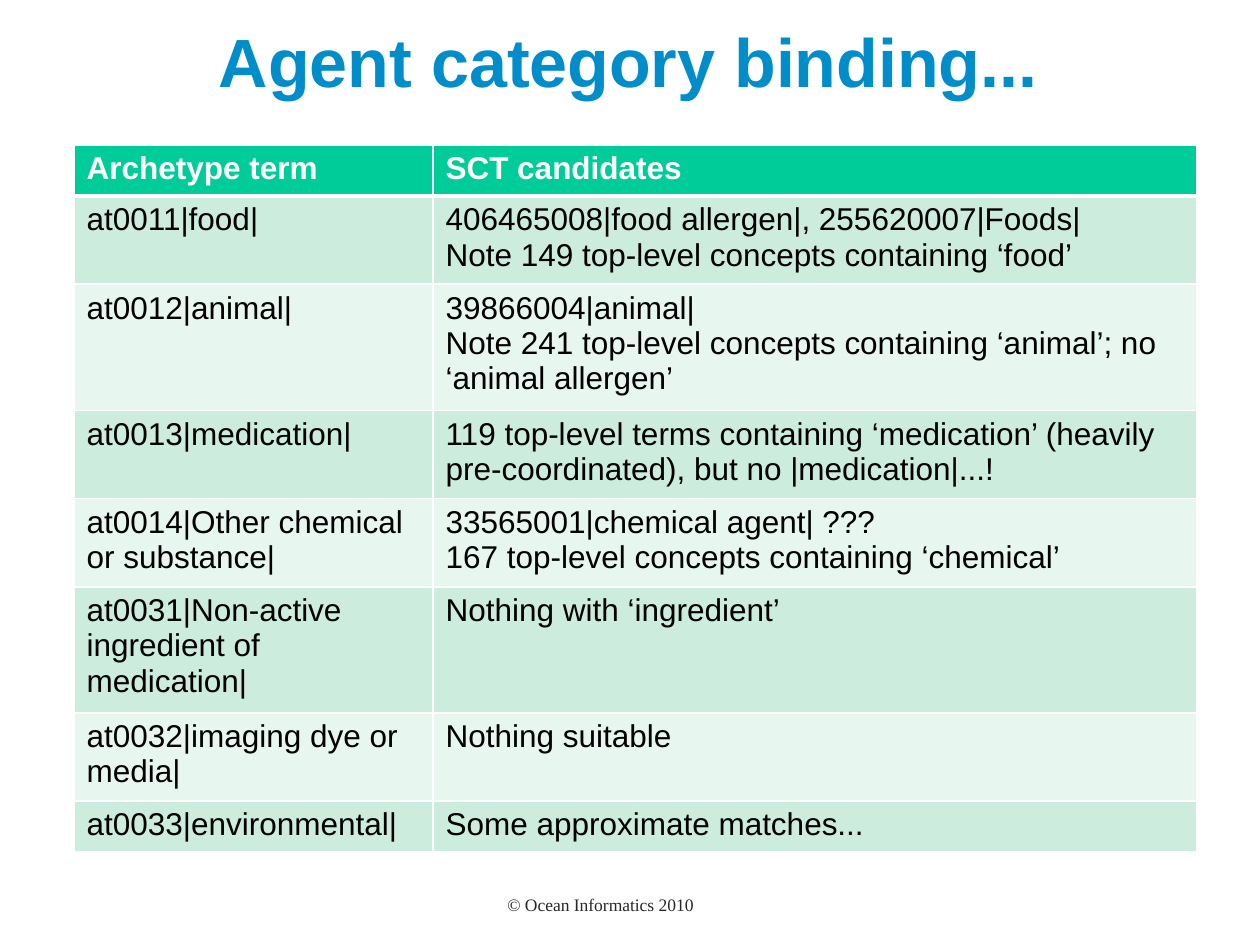
"""Build the agent category binding slide with its table of terminology candidates."""
import dataclasses

import lxml.etree
import pptx
import pptx.dml.color
import pptx.enum.text
import pptx.oxml.ns
import pptx.util

EMU_PER_PX = 914400 / 126


def px(length):
    return pptx.util.Emu(round(length * EMU_PER_PX))


@dataclasses.dataclass(frozen=True)
class Theme:
    heading_font: str = "Arial"
    footer_font: str = "Times New Roman"
    title_size: int = 39
    table_size: int = 18
    footer_size: int = 10
    title: str = "008DC9"
    footer: str = "292627"
    header_fill: str = "00CC99"
    header_text: str = "FFFFFF"
    body_text: str = "000000"
    bands: tuple = ("CCECDE", "E7F6EF")
    border: str = "FFFFFF"


class SlideBuilder:
    def __init__(self, slide, theme):
        self.slide = slide
        self.theme = theme

    def format_text(self, text_frame, font, size, color, bold=False):
        for paragraph in text_frame.paragraphs:
            for run in paragraph.runs:
                run.font.name = font
                run.font.size = pptx.util.Pt(size)
                run.font.bold = bold
                run.font.color.rgb = pptx.dml.color.RGBColor.from_string(color)

    def add_text(self, text, left, top, width, height, font, size, color, bold=False):
        shape = self.slide.shapes.add_textbox(px(left), px(top), px(width), px(height))
        text_frame = shape.text_frame
        text_frame.word_wrap = True
        text_frame.vertical_anchor = pptx.enum.text.MSO_ANCHOR.MIDDLE
        text_frame.text = text
        text_frame.paragraphs[0].alignment = pptx.enum.text.PP_ALIGN.CENTER
        self.format_text(text_frame, font, size, color, bold)

    def add_border(self, cell, side, width):
        properties = cell._tc.get_or_add_tcPr()
        name = pptx.oxml.ns.qn
        line = lxml.etree.SubElement(properties, name(f"a:ln{side}"), w=str(pptx.util.Pt(width)))
        fill = lxml.etree.SubElement(line, name("a:solidFill"))
        lxml.etree.SubElement(fill, name("a:srgbClr"), val=self.theme.border)

    def add_cell(self, cell, text, row_index):
        theme = self.theme
        is_header = row_index == 0
        cell.text_frame.text = text
        color = theme.header_text if is_header else theme.body_text
        self.format_text(cell.text_frame, theme.heading_font, theme.table_size, color, is_header)
        widths = {"L": 1, "R": 1, "T": 3 if row_index == 1 else 1, "B": 3 if is_header else 1}
        for side, width in widths.items():
            self.add_border(cell, side, width)
        fill = theme.header_fill if is_header else theme.bands[(row_index - 1) % 2]
        cell.fill.solid()
        cell.fill.fore_color.rgb = pptx.dml.color.RGBColor.from_string(fill)

    def add_table(self, rows, left, top, column_widths, row_height):
        shape = self.slide.shapes.add_table(
            len(rows), len(column_widths), px(left), px(top),
            px(sum(column_widths)), px(row_height * len(rows)))
        table = shape.table
        for column, width in zip(table.columns, column_widths):
            column.width = px(width)
        for row_index, texts in enumerate(rows):
            table.rows[row_index].height = px(row_height)
            for column_index, text in enumerate(texts):
                self.add_cell(table.cell(row_index, column_index), text, row_index)


BINDINGS = [
    ("Archetype term", "SCT candidates"),
    ("at0011|food|",
     "406465008|food allergen|, 255620007|Foods|\nNote 149 top-level concepts containing ‘food’"),
    ("at0012|animal|",
     "39866004|animal|\n"
     "Note 241 top-level concepts containing ‘animal’; no ‘animal allergen’"),
    ("at0013|medication|",
     "119 top-level terms containing ‘medication’ (heavily pre-coordinated), "
     "but no |medication|...!"),
    ("at0014|Other chemical or substance|",
     "33565001|chemical agent| ???\v167 top-level concepts containing ‘chemical’"),
    ("at0031|Non-active ingredient of medication|", "Nothing with ‘ingredient’"),
    ("at0032|imaging dye or media|", "Nothing suitable"),
    ("at0033|environmental|", "Some approximate matches..."),
]


def main():
    theme = Theme()
    presentation = pptx.Presentation()
    presentation.slide_width = px(1260)
    presentation.slide_height = px(945)
    slide = presentation.slides.add_slide(presentation.slide_layouts[6])
    builder = SlideBuilder(slide, theme)
    builder.add_text("© Ocean Informatics 2010", 392, 887, 417, 34,
                     theme.footer_font, theme.footer_size, theme.footer)
    builder.add_text("Agent category binding...", 63, 6, 1131, 108,
                     theme.heading_font, theme.title_size, theme.title, bold=True)
    builder.add_table(BINDINGS, 74, 145, (359, 764), 51)
    presentation.save("out.pptx")


if __name__ == "__main__":
    main()
